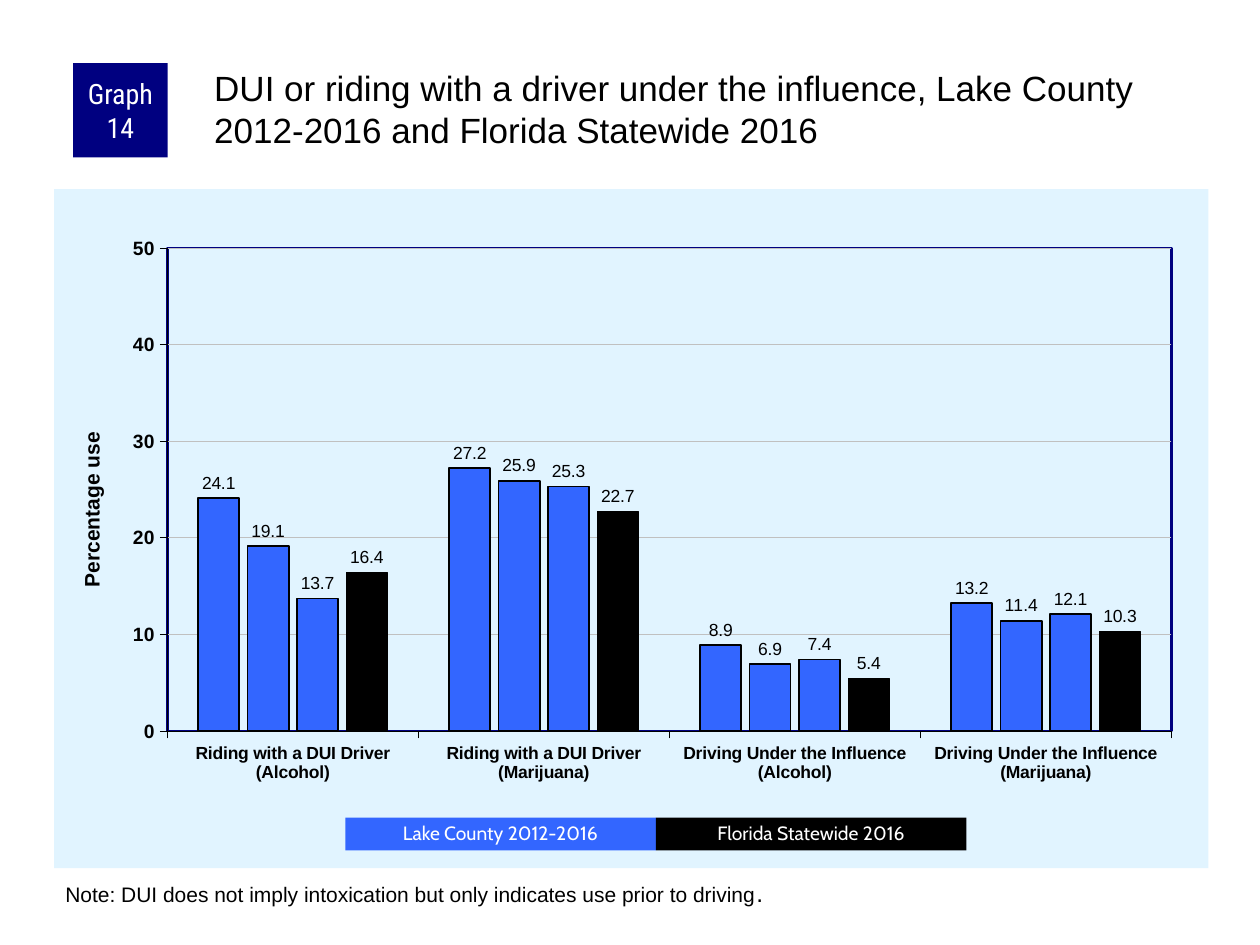
from lxml import etree
from pptx import Presentation
from pptx.chart.data import CategoryChartData
from pptx.dml.color import RGBColor
from pptx.enum.chart import XL_CHART_TYPE, XL_LABEL_POSITION, XL_TICK_MARK
from pptx.enum.shapes import MSO_SHAPE
from pptx.enum.text import MSO_ANCHOR, PP_ALIGN
from pptx.oxml import parse_xml
from pptx.oxml.ns import nsdecls, qn
from pptx.util import Inches, Pt

BLUE, NAVY, BLACK, WHITE = "3366FF", "000080", "000000", "FFFFFF"
PALE, GRAY = "E1F4FF", "C0C0C0"
CATEGORIES = [
    "Riding with a DUI Driver (Alcohol)",
    "Riding with a DUI Driver (Marijuana)",
    "Driving Under the Influence (Alcohol)",
    "Driving Under the Influence (Marijuana)",
]
SERIES = [
    ("Series 1", [24.1, 27.2, 8.9, 13.2], BLUE, 1),
    ("Series 2", [19.1, 25.9, 6.9, 11.4], BLUE, 1),
    ("Series 3", [13.7, 25.3, 7.4, 12.1], BLUE, 0.75),
    ("Series 4", [16.4, 22.7, 5.4, 10.3], BLACK, 0.75),
]


def color(value):
    """Return the RGB colour for a hex string."""
    return RGBColor.from_string(value)


def style_font(font, size, hex_color=BLACK, name="Arial", bold=False):
    """Set the size, colour, typeface and weight of a font."""
    font.size, font.name, font.bold = Pt(size), name, bold
    font.color.rgb = color(hex_color)


def style_line(line, hex_color, width):
    """Set the colour and width of a line."""
    line.color.rgb = color(hex_color)
    line.width = Pt(width)


def add_run(paragraph, text, size, hex_color=BLACK, name="Arial"):
    """Add one styled run to a paragraph."""
    run = paragraph.add_run()
    run.text = text
    style_font(run.font, size, hex_color, name)


def add_text(slide, box, runs, margins):
    """Place a wrapped text box holding (text, size) runs."""
    frame = slide.shapes.add_textbox(*map(Inches, box)).text_frame
    frame.word_wrap = True
    set_margins(frame, margins)
    for text, size in runs:
        add_run(frame.paragraphs[0], text, size)


def set_margins(frame, margins):
    """Set left, top, right and bottom insets in inches."""
    (frame.margin_left, frame.margin_top,
     frame.margin_right, frame.margin_bottom) = map(Inches, margins)


def add_block(slide, box, text, fill, size, font, margins, spacing=1.0):
    """Place a filled rectangle with centred white text."""
    shape = slide.shapes.add_shape(MSO_SHAPE.RECTANGLE, *map(Inches, box))
    shape.shadow.inherit = False
    shape.fill.solid()
    shape.fill.fore_color.rgb = color(fill)
    shape.line.fill.background()
    frame = shape.text_frame
    frame.word_wrap = True
    frame.vertical_anchor = MSO_ANCHOR.MIDDLE
    set_margins(frame, margins)
    paragraph = frame.paragraphs[0]
    paragraph.alignment = PP_ALIGN.CENTER
    paragraph.line_spacing = spacing
    add_run(paragraph, text, size, WHITE, font)


def format_axis(axis, size):
    """Style the ticks, labels and line of an axis."""
    axis.major_tick_mark = XL_TICK_MARK.OUTSIDE
    axis.minor_tick_mark = XL_TICK_MARK.NONE
    style_font(axis.tick_labels.font, size, bold=True)
    style_line(axis.format.line, BLACK, 0.25)


def format_plot_area(chart, left, top, width, height):
    """Fix the inner plot position and frame, and fill the chart area."""
    plot_area = chart._chartSpace.find(".//" + qn("c:plotArea"))
    for layout in plot_area.findall(qn("c:layout")):
        plot_area.remove(layout)
    layout = parse_xml(f"<c:layout {nsdecls('c')}><c:manualLayout/></c:layout>")
    settings = [("layoutTarget", "inner"), ("xMode", "edge"), ("yMode", "edge"),
                ("x", left), ("y", top), ("w", width), ("h", height)]
    for tag, value in settings:
        etree.SubElement(layout[0], qn("c:" + tag)).set("val", str(value))
    plot_area.insert(0, layout)
    plot_area.append(parse_xml(
        f"<c:spPr {nsdecls('c', 'a')}><a:noFill/><a:ln w='{Pt(1.5)}'><a:solidFill>"
        f"<a:srgbClr val='{NAVY}'/></a:solidFill></a:ln></c:spPr>"))
    chart_area = parse_xml(
        f"<c:spPr {nsdecls('c', 'a')}><a:solidFill><a:srgbClr val='{PALE}'/>"
        "</a:solidFill><a:ln><a:noFill/></a:ln></c:spPr>")
    chart._chartSpace.find(qn("c:chart")).addnext(chart_area)


def add_usage_chart(slide, box):
    """Place the clustered column chart of percentage use."""
    data = CategoryChartData(number_format="0.0")
    data.categories = CATEGORIES
    for name, values, _, _ in SERIES:
        data.add_series(name, values)
    chart = slide.shapes.add_chart(
        XL_CHART_TYPE.COLUMN_CLUSTERED, *map(Inches, box), data).chart
    style_font(chart.font, 11.5)
    chart.has_legend = chart.has_title = False
    format_axis(chart.category_axis, 10)
    axis = chart.value_axis
    format_axis(axis, 11)
    axis.minimum_scale, axis.maximum_scale, axis.major_unit = 0, 50, 10
    axis.tick_labels.number_format = "0"
    axis.tick_labels.number_format_is_linked = False
    style_line(axis.major_gridlines.format.line, GRAY, 0.25)
    paragraph = axis.axis_title.text_frame.paragraphs[0]
    add_run(paragraph, "Percentage use", 12)
    paragraph.runs[0].font.bold = True

    plot = chart.plots[0]
    plot.gap_width, plot.overlap, plot.vary_by_categories = 150, -20, False
    for series, (_, _, fill, width) in zip(plot.series, SERIES):
        series.format.fill.solid()
        series.format.fill.fore_color.rgb = color(fill)
        style_line(series.format.line, BLACK, width)
        labels = series.data_labels
        labels.show_value = True
        labels.number_format, labels.number_format_is_linked = "0.0", False
        labels.position = XL_LABEL_POSITION.OUTSIDE_END
        style_font(labels.font, 10)
    format_plot_area(chart, 0.098, 0.087, 0.87, 0.711)


def add_header(slide, left, top, width):
    """Place the graph number and the slide title."""
    add_block(slide, (left, top, 0.75, 0.75), "Graph 14", NAVY, 16,
              "Roboto Condensed", (0.05, 0, 0.05, 0))
    title = ("DUI or riding with a driver under the influence, "
             "Lake County 2012-2016 and Florida Statewide 2016")
    add_text(slide, (left + 1.09, top, width - 1.09, 0.83), [(title, 20)],
             (0.03, 0.03, 0, 0))


def add_legend(slide, left, top, width, height):
    """Place the two legend blocks side by side."""
    entries = [("Lake County 2012-2016", BLUE), ("Florida Statewide 2016", BLACK)]
    block = width / len(entries)
    for index, (text, fill) in enumerate(entries):
        add_block(slide, (left + index * block, top, block, height), text, fill,
                  11, "Cabin", (0.1, 0.05, 0.1, 0.05), 0.9)


def main():
    """Build and save the slide."""
    presentation = Presentation()
    presentation.slide_width, presentation.slide_height = Inches(10), Inches(7.5)
    slide = presentation.slides.add_slide(presentation.slide_layouts[6])
    add_usage_chart(slide, (0.43, 1.5, 9.16, 5.39))
    add_header(slide, 0.58, 0.5, 9.01)
    note = "Note: DUI does not imply intoxication but only indicates use prior to driving"
    add_text(slide, (0.42, 6.92, 9.17, 0.34), [(note, 12), (".", 14)],
             (0.1, 0.05, 0.1, 0.05))
    add_legend(slide, 2.74, 6.49, 4.93, 0.26)
    presentation.save("out.pptx")


if __name__ == "__main__":
    main()
